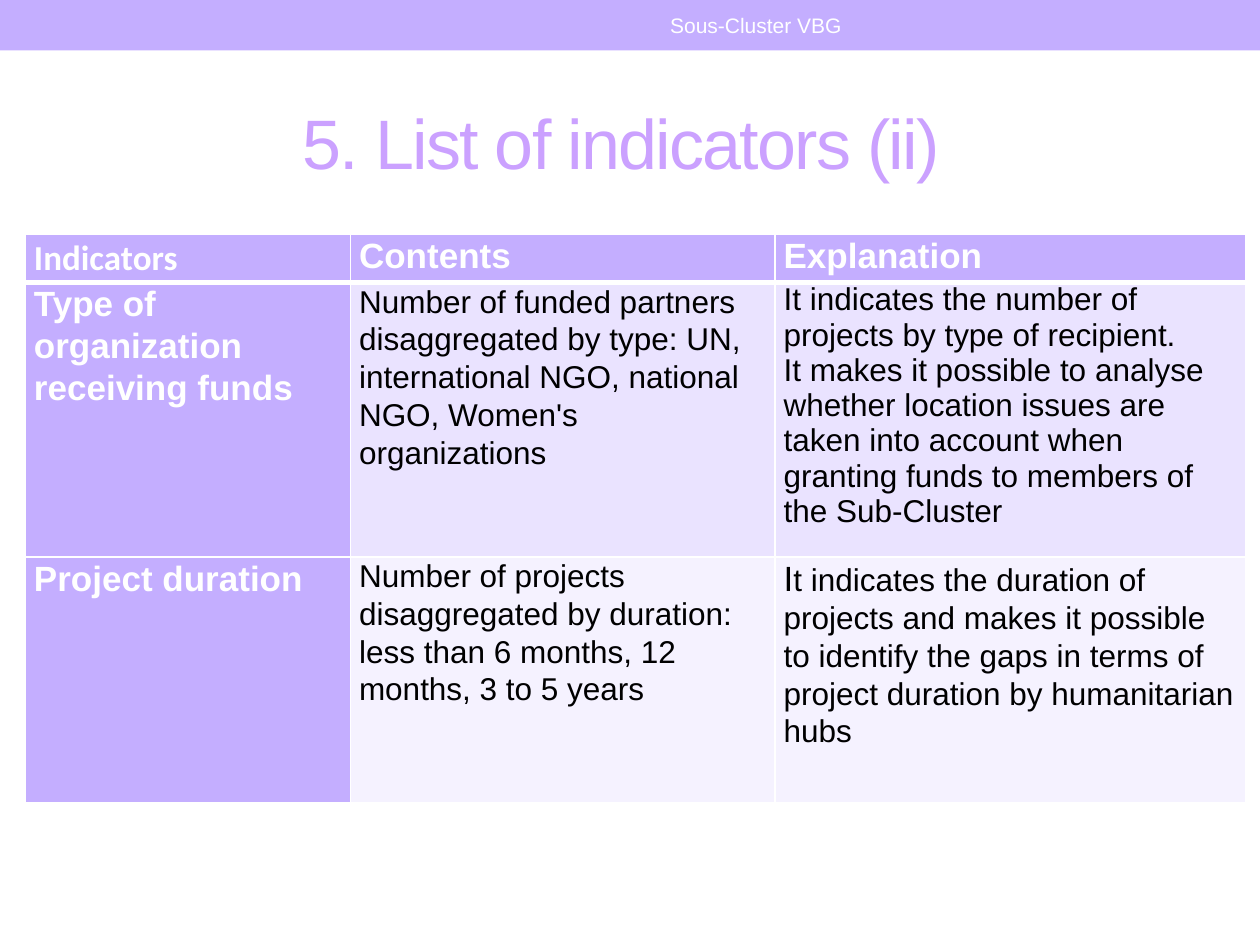
"""Build the slide listing funding indicators, their contents and explanations."""
import pptx
import pptx.dml.color
import pptx.enum.shapes
import pptx.enum.text
import pptx.oxml
import pptx.oxml.ns
import pptx.util
from pptx.util import Inches

COLORS = {"band": "C4AEFF", "title": "CBA1FF", "white": "FFFFFF",
          "black": "000000", "odd": "EAE3FF", "even": "F5F2FF"}
COLUMNS = [2.58, 3.37, 3.74]
ROWS = [0.38, 2.18, 1.95]
CELLS = [
    [["Indicators"], ["Contents"], ["Explanation"]],
    [["Type of organization receiving funds"],
     ["Number of funded partners disaggregated by type: UN, international NGO, "
      "national NGO, Women's organizations"],
     ["It indicates the number of projects by type of recipient.",
      "It makes it possible to analyse whether location issues are taken into "
      "account when granting funds to members of the Sub-Cluster"]],
    [["Project duration"],
     ["Number of projects disaggregated by duration: less than 6 months, "
      "12 months, 3 to 5 years"],
     ["It indicates the duration of projects and makes it possible to identify "
      "the gaps in terms of project duration by humanitarian hubs"]],
]


def rgb(name):
    """Return the named colour."""
    return pptx.dml.color.RGBColor.from_string(COLORS[name])


def set_font(p, size, color, bold=False, name="Arial"):
    """Format a whole paragraph."""
    p.font.name, p.font.size, p.font.bold = name, pptx.util.Pt(size), bold
    p.font.color.rgb = rgb(color)


def add_band(s):
    """Add the coloured band along the top edge."""
    sp = s.shapes.add_shape(pptx.enum.shapes.MSO_SHAPE.RECTANGLE,
                            0, 0, Inches(10), Inches(0.4))
    sp.shadow.inherit = False
    sp.fill.solid()
    sp.fill.fore_color.rgb = rgb("band")
    sp.line.fill.background()
    s.shapes._spTree.insert(2, sp._element)


def fill_text(sp, box, text, size, color):
    """Place a shape and give it one centred line of text."""
    sp.left, sp.top, sp.width, sp.height = map(Inches, box)
    tf = sp.text_frame
    tf.word_wrap = True
    tf.vertical_anchor = pptx.enum.text.MSO_ANCHOR.MIDDLE
    p = tf.paragraphs[0]
    p.alignment = pptx.enum.text.PP_ALIGN.CENTER
    r = p.add_run()
    r.text = text
    set_font(p, size, color)
    return r


def set_borders(cell, header):
    """Draw white cell borders, thicker below the header."""
    tcPr = cell._tc.get_or_add_tcPr()
    for i, side in enumerate("LRTB"):
        width = 3 if header and side == "B" else 1
        tcPr.insert(i, pptx.oxml.parse_xml(
            f'<a:ln{side} {pptx.oxml.ns.nsdecls("a")} w="{pptx.util.Pt(width)}">'
            f'<a:solidFill><a:srgbClr val="{COLORS["white"]}"/></a:solidFill>'
            f'</a:ln{side}>'))


def fill_cell(cell, row, col, texts):
    """Write and format one table cell."""
    heading = row == 0 or col == 0
    cell.margin_left = cell.margin_right = Inches(0.07)
    cell.margin_top = cell.margin_bottom = 0
    cell.fill.solid()
    cell.fill.fore_color.rgb = rgb("band" if heading else "odd" if row % 2 else "even")
    tf = cell.text_frame
    for i, text in enumerate(texts):
        p = tf.add_paragraph() if i else tf.paragraphs[0]
        big_initial = (row, col) == (2, 2)
        for part in (text[:1], text[1:]) if big_initial else (text,):
            p.add_run().text = part
        if big_initial:
            p.runs[0].font.size = pptx.util.Pt(20)
        if len(texts) == 1:
            p.line_spacing = 1.07
        set_font(p, 20 if heading else 18, "white" if heading else "black",
                 heading, "Calibri" if row == col == 0 else "Arial")
    set_borders(cell, row == 0)


def add_indicator_table(s):
    """Add the indicator table."""
    table = s.shapes.add_table(len(ROWS), len(COLUMNS), Inches(0.2), Inches(1.86),
                               Inches(sum(COLUMNS)), Inches(sum(ROWS))).table
    for column, width in zip(table.columns, COLUMNS):
        column.width = Inches(width)
    for i, height in enumerate(ROWS):
        table.rows[i].height = Inches(height)
        for j, texts in enumerate(CELLS[i]):
            fill_cell(table.cell(i, j), i, j, texts)


def main():
    """Assemble and save the slide."""
    prs = pptx.Presentation()
    prs.slide_width, prs.slide_height = Inches(10), Inches(7.5)
    s = prs.slides.add_slide(prs.slide_layouts[5])
    add_band(s)
    r = fill_text(s.shapes.title, (0.5, 0.58, 9, 1.08),
                  "5. List of indicators (ii) ", 40, "title")
    r._r.get_or_add_rPr().set("spc", "-100")
    fill_text(s.shapes.add_textbox(0, 0, 0, 0), (3.75, 0.02, 4.5, 0.36),
              "Sous-Cluster VBG", 12, "white")
    add_indicator_table(s)
    prs.save("out.pptx")


if __name__ == "__main__":
    main()
